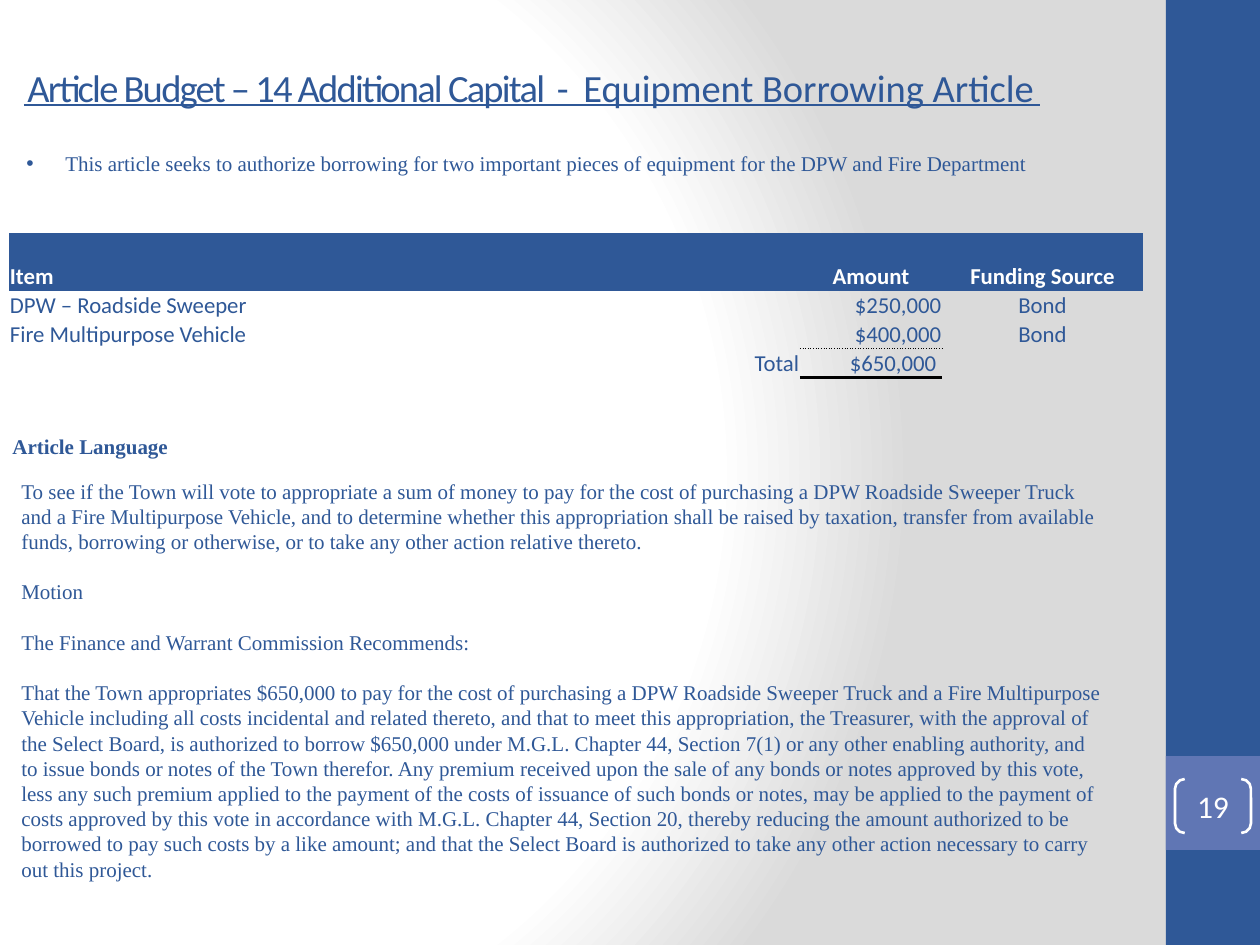
"""Build the equipment borrowing article slide."""
from dataclasses import dataclass

from lxml import etree
from pptx import Presentation
from pptx import util as u
from pptx.dml import color
from pptx.enum import shapes, text
from pptx.oxml import ns

EMU_PER_PX = 914400 / 126
BLUE, WHITE, BLACK, VIOLET, GREY = "2F5897", "FFFFFF", "000000", "6076B4", "DADADA"
SANS, SERIF = "Calibri", "Times New Roman"
LEFT, CENTER, RIGHT = text.PP_ALIGN.LEFT, text.PP_ALIGN.CENTER, text.PP_ALIGN.RIGHT
NO_GRID_STYLE = "{2D5ABB26-0587-4C30-8999-92F81FD0307C}"
ROW_HEIGHT = 29
LINE_PITCH = 14.4


@dataclass
class Box:
    """A rectangle in px."""
    left: int
    top: int
    width: int
    height: int

    def emu(self) -> list[int]:
        """Return the four lengths in EMU."""
        return [px(n) for n in (self.left, self.top, self.width, self.height)]


@dataclass
class Style:
    """The look of a run of text."""
    font: str
    size: int
    color: str = BLUE
    bold: bool = False
    spacing: float = 0


@dataclass
class Column:
    """A table column: width in px and alignments."""
    width: int
    header_align: int
    body_align: int


@dataclass
class Border:
    """A horizontal cell border."""
    side: str
    points: float
    dash: str


def px(length: int) -> int:
    """Turn px into EMU."""
    return round(length * EMU_PER_PX)


def rgb(value: str) -> color.RGBColor:
    """Turn a hex string into a colour."""
    return color.RGBColor.from_string(value)


def style_run(run, style: Style) -> None:
    """Format one run."""
    run.font.name, run.font.size, run.font.bold = style.font, u.Pt(style.size), style.bold
    run.font.color.rgb = rgb(style.color)
    if style.spacing:
        run.font._element.set("spc", str(round(style.spacing * 100)))


def paint_background(slide) -> None:
    """Fill the background with a round gradient."""
    fill = slide.background.fill
    fill.gradient()
    gradient = slide._element.find(".//" + ns.qn("a:gradFill"))
    for child in list(gradient):
        gradient.remove(child)
    stops = etree.SubElement(gradient, ns.qn("a:gsLst"))
    for percent, shade in ((0, WHITE), (75, WHITE), (100, GREY)):
        stop = etree.SubElement(stops, ns.qn("a:gs"), pos=str(percent * 1000))
        etree.SubElement(stop, ns.qn("a:srgbClr"), val=shade)
    circle = etree.SubElement(gradient, ns.qn("a:path"), {"path": "circle"})
    etree.SubElement(circle, ns.qn("a:fillToRect"), l="20000", t="50000", r="100000", b="50000")


def add_panel(slide, box: Box, fill: str) -> None:
    """Draw a plain filled rectangle."""
    panel = slide.shapes.add_shape(shapes.MSO_SHAPE.RECTANGLE, *box.emu())
    panel.shadow.inherit = False
    panel.fill.solid()
    panel.fill.fore_color.rgb = rgb(fill)
    panel.line.fill.background()


def add_text(slide, box: Box, paragraphs: list[str], style: Style):
    """Add a wrapping text box and return its frame."""
    frame = slide.shapes.add_textbox(*box.emu()).text_frame
    frame.word_wrap = True
    frame.text = "\n".join(paragraphs)
    for paragraph in frame.paragraphs:
        for run in paragraph.runs:
            style_run(run, style)
    return frame


def add_title(slide) -> None:
    """Add the title and its rule."""
    paragraph = add_text(slide, Box(15, 58, 1159, 76), [""], Style(SANS, 22)).paragraphs[0]
    for words, spacing in (("Article Budget – 14 Additional Capital", -1), (" - ", 1.7),
                           ("Equipment Borrowing Article", 0)):
        run = paragraph.add_run()
        run.text = words
        style_run(run, Style(SANS, 22, spacing=spacing))
    rule = slide.shapes.add_connector(shapes.MSO_CONNECTOR.STRAIGHT, px(24), px(105), px(1040), px(105))
    rule.line.color.rgb = rgb(BLUE)
    rule.line.width = u.Pt(1.25)
    etree.SubElement(rule._element.spPr, ns.qn("a:effectLst"))


def add_page_number(slide, box: Box, number: str) -> None:
    """Draw the bracketed page number."""
    badge = slide.shapes.add_shape(shapes.MSO_SHAPE.DOUBLE_BRACKET, *box.emu())
    badge.adjustments[0] = 0.18
    badge.shadow.inherit = False
    badge.fill.background()
    badge.line.color.rgb = rgb(WHITE)
    badge.line.width = u.Pt(1.5)
    frame = badge.text_frame
    frame.margin_left = frame.margin_right = frame.margin_top = frame.margin_bottom = 0
    frame.vertical_anchor = text.MSO_ANCHOR.MIDDLE
    frame.text = number
    frame.paragraphs[0].alignment = CENTER
    style_run(frame.paragraphs[0].runs[0], Style(SANS, 18, WHITE))


def add_border(cell, border: Border) -> None:
    """Put a border ahead of the other cell properties."""
    line = etree.Element(ns.qn("a:" + border.side), w=str(u.Pt(border.points)))
    solid = etree.SubElement(line, ns.qn("a:solidFill"))
    etree.SubElement(solid, ns.qn("a:srgbClr"), val=BLACK)
    etree.SubElement(line, ns.qn("a:prstDash"), val=border.dash)
    cell._tc.get_or_add_tcPr().insert(0, line)


def fill_cell(cell, words: str, align: int, header: bool) -> None:
    """Write and format one table cell."""
    cell.margin_left = cell.margin_right = cell.margin_top = px(1)
    cell.margin_bottom = 0
    cell.vertical_anchor = text.MSO_ANCHOR.BOTTOM
    cell.text = words
    paragraph = cell.text_frame.paragraphs[0]
    paragraph.alignment = align
    for run in paragraph.runs:
        style_run(run, Style(SANS, 13, WHITE if header else BLUE, header))
    if not words:
        etree.SubElement(paragraph._p, ns.qn("a:endParaRPr"), sz="1300")
    if header:
        cell.fill.solid()
        cell.fill.fore_color.rgb = rgb(BLUE)
    else:
        cell.fill.background()


def add_funding_table(slide) -> None:
    """Add the table of items, amounts and funding sources."""
    columns = [Column(791, LEFT, LEFT), Column(142, CENTER, RIGHT), Column(201, CENTER, CENTER)]
    rows = [("", "", ""), ("Item", "Amount", "Funding Source"),
            ("DPW – Roadside Sweeper", "$250,000", "Bond"),
            ("Fire Multipurpose Vehicle", "$400,000", "Bond"), ("Total", "$650,000", "")]
    box = Box(9, 233, sum(c.width for c in columns), ROW_HEIGHT * len(rows))
    table = slide.shapes.add_table(len(rows), len(columns), *box.emu()).table
    table.first_row = table.horz_banding = False
    table._tbl.find(".//" + ns.qn("a:tableStyleId")).text = NO_GRID_STYLE
    for index, column in enumerate(columns):
        table.columns[index].width = px(column.width)
    for r, row in enumerate(rows):
        table.rows[r].height = px(ROW_HEIGHT)
        for c, (words, column) in enumerate(zip(row, columns)):
            align = column.header_align if r < 2 else column.body_align
            fill_cell(table.cell(r, c), words, RIGHT if words == "Total" else align, r < 2)
    total = table.cell(4, 1)
    total.margin_right = px(6)
    add_border(table.cell(3, 1), Border("lnB", 0.5, "dot"))
    add_border(total, Border("lnB", 2, "solid"))
    add_border(total, Border("lnT", 0.5, "dot"))


def add_article(slide) -> None:
    """Add the summary bullet, the heading and the article wording."""
    body = Style(SERIF, 12)
    summary = add_text(slide, Box(14, 144, 1089, 38), [
        "This article seeks to authorize borrowing for two important pieces of equipment for the DPW and Fire Department"
    ], body).paragraphs[0]
    properties = summary._p.get_or_add_pPr()
    properties.set("marL", str(px(39)))
    properties.set("indent", str(-px(39)))
    etree.SubElement(properties, ns.qn("a:buFont"), typeface="Arial")
    etree.SubElement(properties, ns.qn("a:buChar"), char="•")
    add_text(slide, Box(0, 427, 1076, 38), ["Article Language"], Style(SERIF, 12, bold=True))
    motion = " ".join([
        "That the Town appropriates $650,000 to pay for the cost of purchasing a DPW Roadside Sweeper Truck and a Fire Multipurpose Vehicle including all costs incidental and related thereto, and that to meet this appropriation, the Treasurer, with the approval of the Select Board, is authorized to borrow $650,000 under M.G.L. Chapter 44, Section 7(1) or any other enabling authority, and to issue bonds or notes of the Town therefor.",
        "Any premium received upon the sale of any bonds or notes approved by this vote, less any such premium applied to the payment of the costs of issuance of such bonds or notes, may be applied to the payment of costs approved by this vote in accordance with M.G.L. Chapter 44, Section 20, thereby reducing the amount authorized to be borrowed to pay such costs by a like amount; and that the Select Board is authorized to take any other action necessary to carry out this project."])
    wording = add_text(slide, Box(9, 472, 1111, 440), [
        "To see if the Town will vote to appropriate a sum of money to pay for the cost of purchasing a DPW Roadside Sweeper Truck and a Fire Multipurpose Vehicle, and to determine whether this appropriation shall be raised by taxation, transfer from available funds, borrowing or otherwise, or to take any other action relative thereto.",
        "Motion", "The Finance and Warrant Commission Recommends:", motion], body)
    for paragraph in wording.paragraphs:
        paragraph.line_spacing = paragraph.space_after = u.Pt(LINE_PITCH)


def main() -> None:
    """Build and save the slide."""
    deck = Presentation()
    deck.slide_width, deck.slide_height = px(1260), px(945)
    slide = deck.slides.add_slide(deck.slide_layouts[6])
    paint_background(slide)
    add_panel(slide, Box(1166, 0, 94, 945), BLUE)
    add_panel(slide, Box(1166, 756, 94, 94), VIOLET)
    add_funding_table(slide)
    add_title(slide)
    add_page_number(slide, Box(1175, 779, 76, 54), "19")
    add_article(slide)
    deck.save("out.pptx")


if __name__ == "__main__":
    main()
